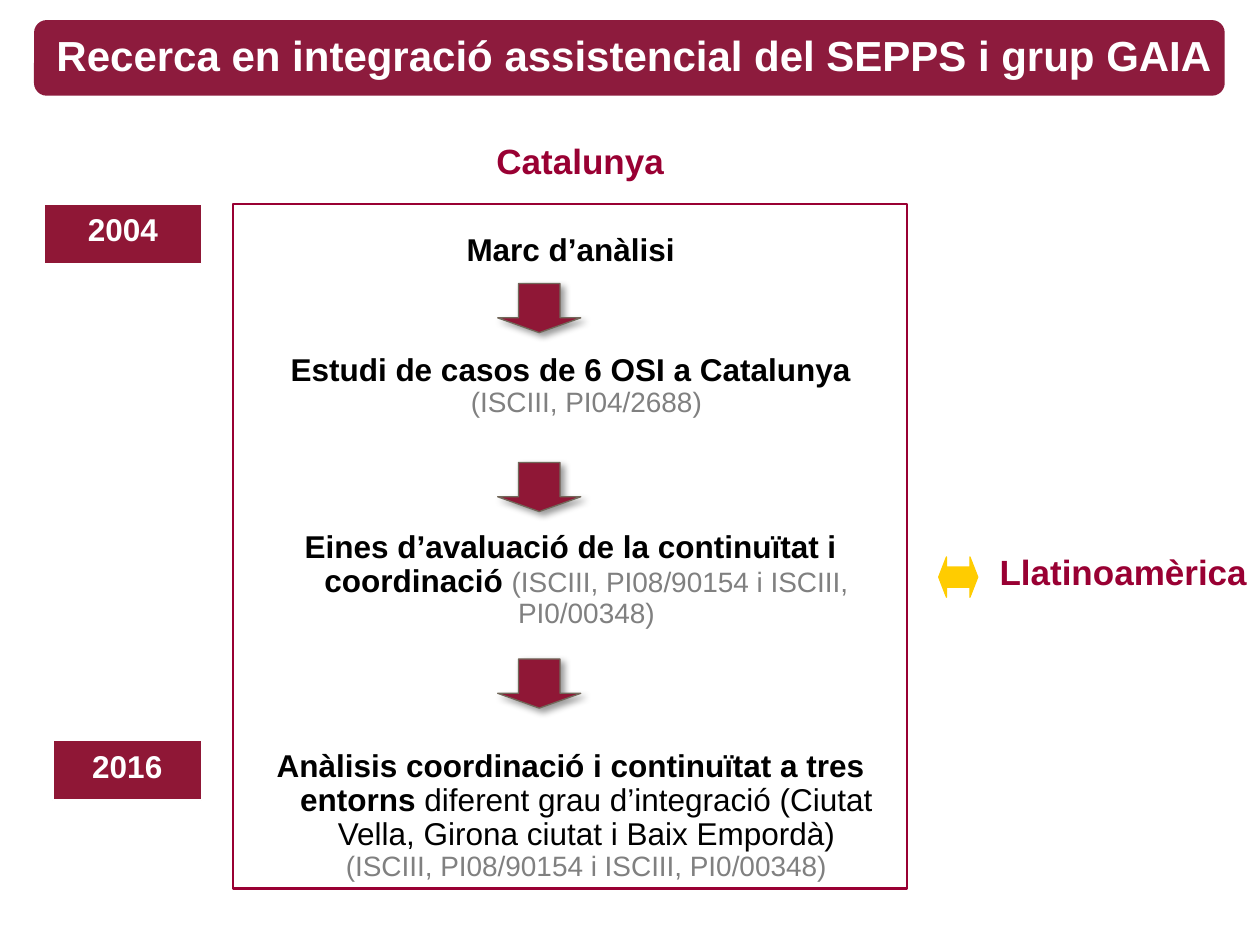
from lxml import etree
from pptx import Presentation
from pptx.dml.color import RGBColor
from pptx.enum.shapes import MSO_SHAPE
from pptx.enum.text import MSO_ANCHOR, PP_ALIGN
from pptx.oxml.ns import qn
from pptx.util import Inches, Pt

RECT, ROUND = MSO_SHAPE.RECTANGLE, MSO_SHAPE.ROUNDED_RECTANGLE
DOWN, BOTH = MSO_SHAPE.DOWN_ARROW, MSO_SHAPE.LEFT_RIGHT_ARROW
LEFT, CENTER = PP_ALIGN.LEFT, PP_ALIGN.CENTER
TOP, MIDDLE = MSO_ANCHOR.TOP, MSO_ANCHOR.MIDDLE

COLORS = {"band": "8D1B3D", "wine": "8F1736", "rose": "990033",
          "gold": "FFCC00", "edge": "71685A", "gray": "808080",
          "black": "000000", "white": "FFFFFF"}
TITLE = "Recerca en integració assistencial del SEPPS i grup GAIA"
BOLD, PLAIN, NOTE = (18, "black", True), (18, "black", False), (16, "gray", False)
STEPS = [
    (0, [("Marc d’anàlisi", BOLD)]),
    (49, [("Estudi de casos de 6 OSI a Catalunya ", BOLD),
          ("(ISCIII, PI04/2688)", NOTE)]),
    (64.5, [("Eines d’avaluació de la continuïtat i coordinació ", BOLD),
            ("(ISCIII, PI08/90154 i ISCIII, PI0/00348)", NOTE)]),
    (69, [("Anàlisis coordinació i continuïtat a tres entorns", BOLD),
          (" diferent grau d’integració (Ciutat Vella, Girona ciutat i Baix Empordà) ", PLAIN),
          ("(ISCIII, PI08/90154 i ISCIII, PI0/00348)", NOTE)]),
]
ARROWS = [2.25, 3.67, 5.23]
YEARS = [("2004", (0.35, 1.62, 1.25, 0.47)), ("2016", (0.42, 5.88, 1.18, 0.47))]
PLACES = [("Catalunya", (2.36, 1.08, 4.49, 0.39)),
          ("Llatinoamèrica", (7.91, 4.34, 2.01, 0.39))]

deck = Presentation()
deck.slide_width, deck.slide_height = Inches(10), Inches(7.5)
slide = deck.slides.add_slide(deck.slide_layouts[6])


def color(name):
    return RGBColor.from_string(COLORS[name])


def draw(kind, at, fill=None, line=None, width=0.75, adjust=()):
    shape = slide.shapes.add_shape(kind, *map(Inches, at))
    shape.shadow.inherit = False
    if fill:
        shape.fill.solid()
        shape.fill.fore_color.rgb = color(fill)
    else:
        shape.fill.background()
    if line:
        shape.line.color.rgb = color(line)
        shape.line.width = Pt(width)
    else:
        shape.line.fill.background()
    for i, value in enumerate(adjust):
        shape.adjustments[i] = value
    return shape


def write(par, runs, align=CENTER):
    par.alignment = align
    for text, (size, tint, bold) in runs:
        run = par.add_run()
        run.text = text
        font = run.font
        font.name, font.size, font.bold = "Arial", Pt(size), bold
        font.color.rgb = color(tint)


def label(at, text, style, align=CENTER, wrap=False):
    frame = slide.shapes.add_textbox(*map(Inches, at)).text_frame
    frame.word_wrap, frame.vertical_anchor = wrap, MIDDLE
    write(frame.paragraphs[0], [(text, style)], align)
    return frame


def shade(shape):
    effects = shape._element.spPr.find(qn("a:effectLst"))
    shadow = etree.SubElement(effects, qn("a:outerShdw"), blurRad=str(Pt(4)),
                              dist=str(Pt(3)), dir="2700000", rotWithShape="0")
    tint = etree.SubElement(shadow, qn("a:srgbClr"), val=COLORS["black"])
    etree.SubElement(tint, qn("a:alpha"), val="40000")


draw(ROUND, (0.27, 0.16, 9.45, 0.6), "band", adjust=[0.167])
title = label((0.35, 0.24, 9.37, 0.44), TITLE, (24, "white", True), LEFT, True)
title.paragraphs[0].line_spacing = 0.9

draw(RECT, (1.85, 1.62, 5.35, 5.43), line="rose", width=1.5)
frame = draw(RECT, (2.01, 1.7, 5.04, 5.28), line="white", width=1.5).text_frame
frame.word_wrap, frame.vertical_anchor = True, TOP
frame.margin_left = frame.margin_right = Inches(0.08)
frame.margin_top, frame.margin_bottom = Inches(0.16), Inches(0.05)
for i, (gap, runs) in enumerate(STEPS):
    par = frame.add_paragraph() if i else frame.paragraphs[0]
    props = par._p.get_or_add_pPr()
    props.set("marL", str(Inches(0.25)))
    props.set("indent", str(-Inches(0.25)))
    par.line_spacing, par.space_before = 0.9, Pt(gap)
    write(par, runs)

for top in ARROWS:
    shade(draw(DOWN, (3.95, top, 0.66, 0.39), "wine", "edge", adjust=[0.5, 0.301]))

for year, at in YEARS:
    frame = draw(RECT, at, "wine", "white").text_frame
    frame.word_wrap, frame.vertical_anchor = True, TOP
    write(frame.paragraphs[0], [(year, (18, "white", True))])

for place, at in PLACES:
    frame = label(at, place, (20, "rose", True))
    frame.margin_left = frame.margin_right = 0
draw(BOTH, (7.45, 4.42, 0.31, 0.32), "gold", "gold", adjust=[0.5, 0.2])

deck.save("out.pptx")
